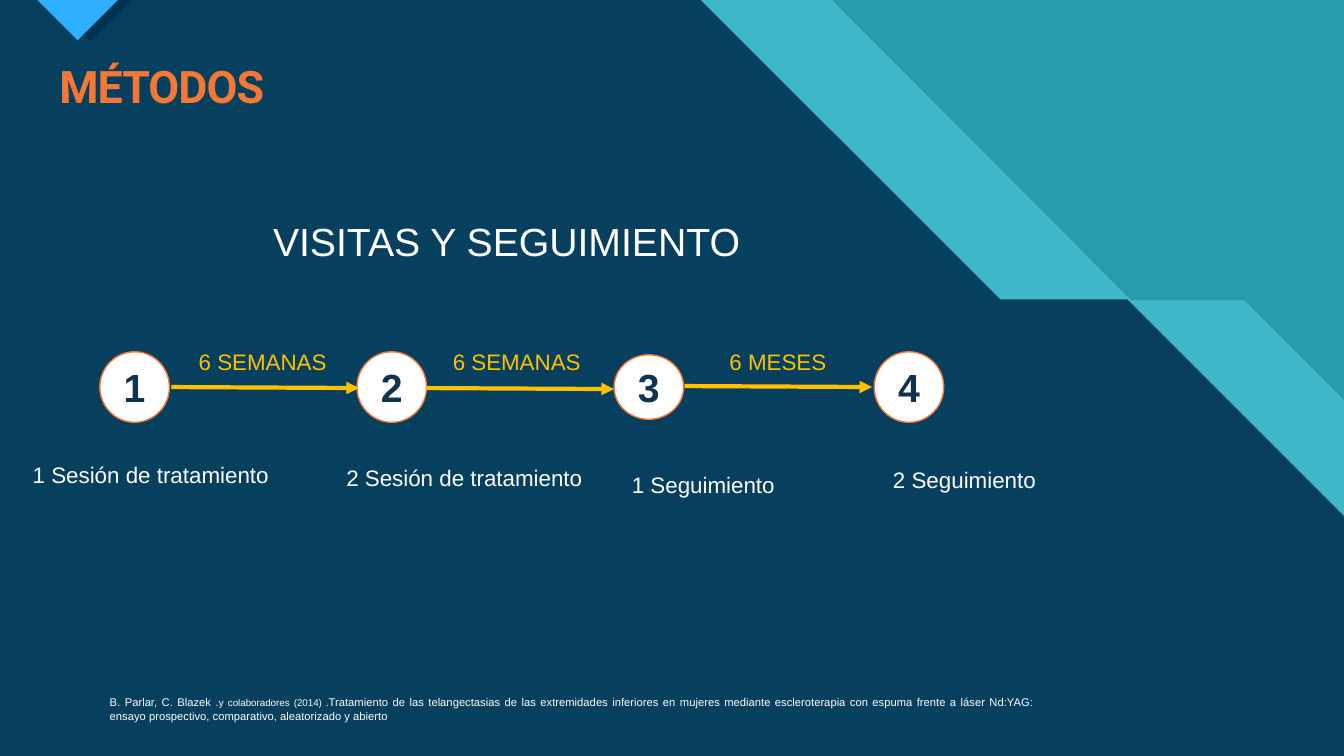
import pptx
import pptx.util
import pptx.dml.color
import pptx.enum.shapes
import pptx.enum.text
import lxml.etree
from pptx.util import Inches

ALIGN = pptx.enum.text.PP_ALIGN
WHITE, ORANGE, AMBER, NAVY = "FFFFFF", "F47735", "FFC000", "103350"


def color(hex_string):
    return pptx.dml.color.RGBColor.from_string(hex_string)


def write(shape, *runs, size=16, font="Arial", fill=WHITE, bold=False,
          align=ALIGN.LEFT, anchor=pptx.enum.text.MSO_ANCHOR.TOP):
    """Write runs, each a text or a (text, size) pair, into one paragraph."""
    frame = shape.text_frame
    frame.word_wrap = True
    frame.vertical_anchor = anchor
    paragraph = frame.paragraphs[0]
    paragraph.alignment = align
    for item in runs:
        text, points = (item, size) if isinstance(item, str) else item
        run = paragraph.add_run()
        run.text = text
        run.font.size = pptx.util.Pt(points)
        run.font.name = font
        run.font.bold = bold
        run.font.color.rgb = color(fill)
    return paragraph


presentation = pptx.Presentation()
presentation.slide_width = Inches(13.33)
presentation.slide_height = Inches(7.5)
slide = presentation.slides.add_slide(presentation.slide_layouts[6])
shapes = slide.shapes

# Background: teal, two stepped bands and the corner marker
slide.background.fill.solid()
slide.background.fill.fore_color.rgb = color("299CAB")
panels = [
    ("3FB9C9", [(0, 0), (8.25, 0), (11.22, 2.98), (12.34, 2.98),
                (13.33, 3.97), (13.33, 7.5), (0, 7.5)]),
    ("06405E", [(0, 0), (6.95, 0), (9.92, 2.97), (11.18, 2.97),
                (13.33, 5.12), (13.33, 7.5), (0, 7.5)]),
    ("003352", [(0.48, 0), (1.31, 0), (0.9, 0.41)]),
    ("2FAFFF", [(0.37, 0), (1.17, 0), (0.77, 0.4)]),
]
for fill, corners in panels:
    points = [(Inches(x), Inches(y)) for x, y in corners]
    builder = shapes.build_freeform(*points[0])
    builder.add_line_segments(points[1:], close=True)
    panel = builder.convert_to_shape()
    panel.shadow.inherit = False
    panel.fill.solid()
    panel.fill.fore_color.rgb = color(fill)
    panel.line.fill.background()

# Title and heading
title = shapes.add_textbox(Inches(0.49), Inches(0.59), Inches(12.26), Inches(0.59))
paragraph = write(title, "MÉTODOS", size=32, font="Roboto", fill=ORANGE, bold=True)
paragraph.line_spacing = 0.9
paragraph.runs[0].font._element.set("spc", "-70")

heading = shapes.add_textbox(Inches(2.61), Inches(2.11), Inches(4.94), Inches(0.57))
write(heading, "VISITAS Y SEGUIMIENTO", size=28)

# Numbered visits: left, top, height
visits = [(0.99, 3.49, 0.7), (3.54, 3.49, 0.7), (6.09, 3.52, 0.64), (8.67, 3.49, 0.7)]
for number, (left, top, height) in enumerate(visits, start=1):
    circle = shapes.add_shape(pptx.enum.shapes.MSO_SHAPE.OVAL, Inches(left),
                              Inches(top), Inches(0.69), Inches(height))
    circle.shadow.inherit = False
    circle.fill.solid()
    circle.fill.fore_color.rgb = color(WHITE)
    circle.line.color.rgb = color(ORANGE)
    circle.line.width = pptx.util.Pt(1)
    write(circle, str(number), size=28, fill=NAVY, bold=True, align=ALIGN.CENTER,
          anchor=pptx.enum.text.MSO_ANCHOR.MIDDLE)

# Arrows between visits: left and top of the start
for left, top in [(1.7, 3.84), (4.23, 3.85), (6.79, 3.83)]:
    arrow = shapes.add_connector(pptx.enum.shapes.MSO_CONNECTOR.STRAIGHT, Inches(left),
                                 Inches(top), Inches(left + 1.86), Inches(top + 0.01))
    arrow.line.color.rgb = color(AMBER)
    arrow.line.width = pptx.util.Pt(3)
    lxml.etree.SubElement(arrow.line._get_or_add_ln(),
                          pptx.oxml.ns.qn("a:tailEnd"), type="triangle")
    lxml.etree.SubElement(arrow._element.spPr, pptx.oxml.ns.qn("a:effectLst"))

# Intervals above the arrows and visit names below the circles
labels = [
    ("6 SEMANAS", 1.31, 3.4, AMBER),
    ("6 SEMANAS", 3.83, 3.4, AMBER),
    ("6 MESES", 6.42, 3.4, AMBER),
    ("1 Sesión de tratamiento", 0.2, 4.53, WHITE),
    ("2 Sesión de tratamiento", 3.31, 4.56, WHITE),
    ("1 Seguimiento", 5.68, 4.63, WHITE),
    ("2 Seguimiento", 8.27, 4.58, WHITE),
]
for text, left, top, fill in labels:
    label = shapes.add_textbox(Inches(left), Inches(top), Inches(2.59), Inches(0.37))
    write(label, text, fill=fill, align=ALIGN.CENTER)

# Reference
reference = shapes.add_textbox(Inches(0.99), Inches(6.85), Inches(9.37), Inches(0.37))
write(reference, "B. Parlar, C. Blazek .", ("y colaboradores (2014) .", 7),
      "Tratamiento de las telangectasias de las extremidades inferiores en mujeres "
      "mediante escleroterapia con espuma frente a láser Nd:YAG: ensayo prospectivo, "
      "comparativo, aleatorizado y abierto", size=8, align=ALIGN.JUSTIFY)

presentation.save("out.pptx")
